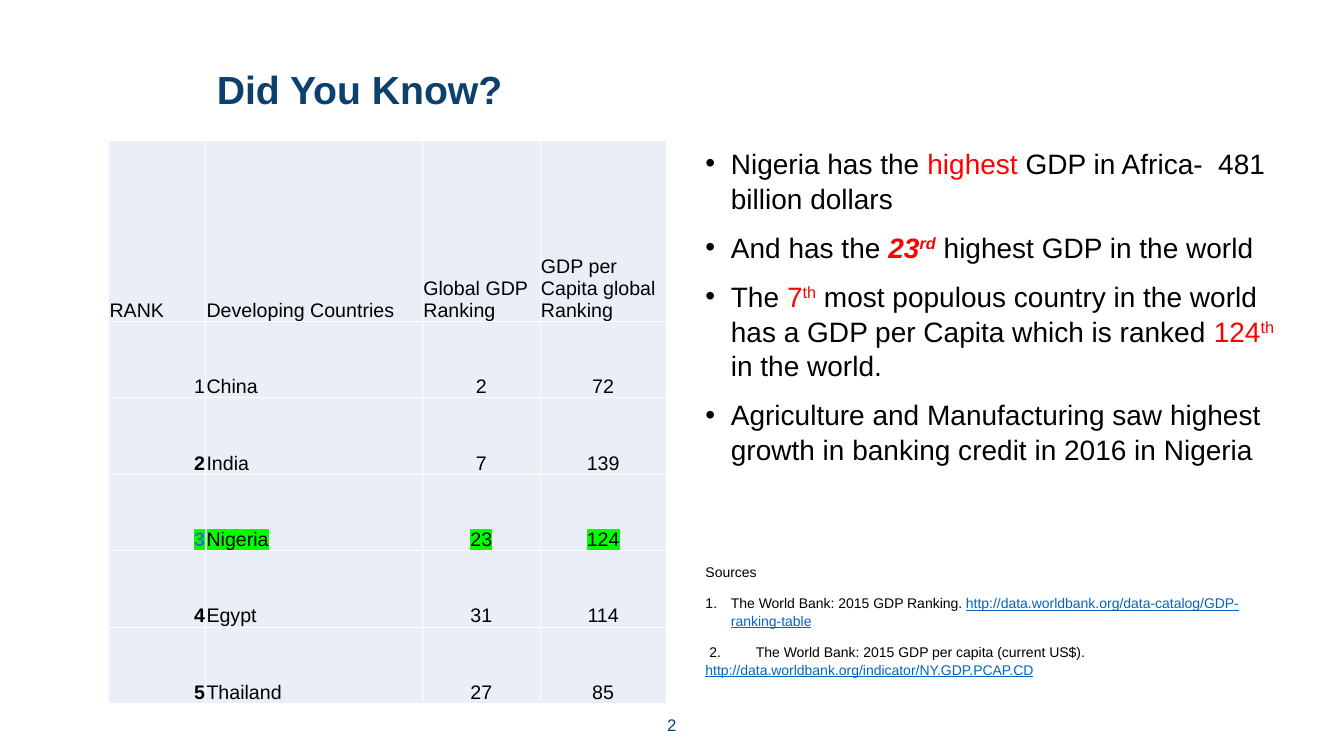
from lxml.etree import SubElement
from pptx import Presentation
from pptx.dml.color import RGBColor
from pptx.enum.text import MSO_ANCHOR as ANCHOR, PP_ALIGN as ALIGN
from pptx.oxml import parse_xml
from pptx.oxml.ns import nsdecls, qn
from pptx.util import Cm, Pt

COLORS = {"navy": "0C406D", "black": "000000", "red": "FF0000", "link": "0563C1",
          "rank": "2F75B5", "cell": "EAEFF7", "border": "FFFFFF", "marker": "00FF00"}
FONT = "Arial"

RED = dict(color="red")
RED_BOLD = dict(color="red", bold=True, italic=True)
LINK = dict(color="link", underline=True)
SUPER = dict(baseline=30000)

FACTS = [
    [("Nigeria has the ", {}), ("highest", RED), (" GDP in Africa-  481 billion dollars", {})],
    [("And has the ", {}), ("23", RED_BOLD), ("rd", RED_BOLD | SUPER),
     (" highest GDP in the world", {})],
    [("The ", {}), ("7", RED), ("th", RED | SUPER),
     (" most populous country in the world has a GDP per Capita which is ranked ", {}),
     ("124", RED), ("th", RED | SUPER), (" in the world.", {})],
    [("Agriculture and Manufacturing saw highest growth in banking credit in 2016 in Nigeria", {})],
]
HEADINGS = ["RANK", "Developing Countries", "Global GDP Ranking", "GDP per Capita global Ranking"]
COUNTRIES = [("China", 2, 72), ("India", 7, 139), ("Nigeria", 23, 124),
             ("Egypt", 31, 114), ("Thailand", 27, 85)]


def add_text(p, text, size=20, color="black", bold=False, italic=False,
             underline=False, baseline=None, highlight=None):
    r = p.add_run()
    r.text = text
    font = r.font
    font.name, font.size = FONT, Pt(size)
    font.bold, font.italic, font.underline = bold, italic, underline
    font.color.rgb = RGBColor.from_string(COLORS[color])
    rPr = r._r.get_or_add_rPr()
    if baseline:
        rPr.set("baseline", str(baseline))
    if highlight:
        rPr.find(qn("a:solidFill")).addnext(parse_xml(
            f'<a:highlight {nsdecls("a")}><a:srgbClr val="{COLORS[highlight]}"/></a:highlight>'))


def add_text_box(slide, left, top, width, height, anchor=ANCHOR.TOP):
    tf = slide.shapes.add_textbox(left, top, width, height).text_frame
    tf.word_wrap = True
    tf.vertical_anchor = anchor
    return tf


def next_paragraph(tf, first, margin=0, indent=0):
    p = tf.paragraphs[0] if first else tf.add_paragraph()
    p.line_spacing = 1.04
    p.space_before = Pt(0 if first else 10)
    pPr = p._p.get_or_add_pPr()
    pPr.set("marL", str(margin))
    pPr.set("indent", str(indent))
    return p, pPr


def add_title(slide, left, top, width, height):
    sp = slide.shapes.title
    sp.left, sp.top, sp.width, sp.height = left, top, width, height
    sp.text_frame.vertical_anchor = ANCHOR.MIDDLE
    p = sp.text_frame.paragraphs[0]
    p.alignment, p.line_spacing = ALIGN.LEFT, 0.9
    add_text(p, "Did You Know?", size=28, color="navy", bold=True)


def add_borders(cell):
    tcPr = cell._tc.get_or_add_tcPr()
    for i, side in enumerate(("lnL", "lnR", "lnT", "lnB")):
        tcPr.insert(i, parse_xml(
            f'<a:{side} {nsdecls("a")} w="12700"><a:solidFill>'
            f'<a:srgbClr val="{COLORS["border"]}"/></a:solidFill></a:{side}>'))


def fill_cell(cell, text, align, **fmt):
    cell.margin_left = cell.margin_right = cell.margin_top = Cm(0.02)
    cell.margin_bottom = 0
    cell.vertical_anchor = ANCHOR.BOTTOM
    cell.fill.solid()
    cell.fill.fore_color.rgb = RGBColor.from_string(COLORS["cell"])
    add_borders(cell)
    p = cell.text_frame.paragraphs[0]
    p.alignment = align
    add_text(p, text, size=14, **fmt)


def add_ranking_table(slide, left, top, width, height):
    table = slide.shapes.add_table(len(COUNTRIES) + 1, len(HEADINGS),
                                   left, top, width, height).table
    for col, share in zip(table.columns, (0.174, 0.389, 0.211, 0.226)):
        col.width = int(width * share)
    header_height = Cm(4.57)
    for i, row in enumerate(table.rows):
        row.height = (height - header_height) // len(COUNTRIES) if i else header_height

    for c, heading in enumerate(HEADINGS):
        fill_cell(table.cell(0, c), heading, ALIGN.LEFT)
    aligns = (ALIGN.RIGHT, ALIGN.LEFT, ALIGN.CENTER, ALIGN.CENTER)
    for rank, country in enumerate(COUNTRIES, 1):
        marked = country[0] == "Nigeria"
        for c, value in enumerate((rank, *country)):
            fill_cell(table.cell(rank, c), str(value), aligns[c],
                      bold=c == 0 and rank > 1,
                      color="rank" if marked and c == 0 else "black",
                      highlight="marker" if marked else None)


def add_facts(slide, left, top, width, height):
    tf = add_text_box(slide, left, top, width, height)
    for i, fact in enumerate(FACTS):
        p, pPr = next_paragraph(tf, i == 0, Cm(0.64), -Cm(0.64))
        SubElement(pPr, qn("a:buFont")).set("typeface", FONT)
        SubElement(pPr, qn("a:buChar")).set("char", "•")
        for text, fmt in fact:
            add_text(p, text, **fmt)


def add_sources(slide, left, top, width, height):
    tf = add_text_box(slide, left, top, width, height)
    p, _ = next_paragraph(tf, True)
    add_text(p, "Sources", size=10)

    # Numbered source with a hanging indent
    p, pPr = next_paragraph(tf, False, Cm(0.64), -Cm(0.64))
    SubElement(pPr, qn("a:buFont")).set("typeface", FONT)
    SubElement(pPr, qn("a:buAutoNum")).set("type", "arabicPeriod")
    add_text(p, "The World Bank: 2015 GDP Ranking. ", size=10)
    add_text(p, "http://data.worldbank.org/data-catalog/GDP-ranking-table", size=10, **LINK)

    # Source with a typed number, whose second line starts at the margin
    p, pPr = next_paragraph(tf, False, 0, Cm(0.1))
    tab = SubElement(SubElement(pPr, qn("a:tabLst")), qn("a:tab"))
    tab.set("pos", str(Cm(0.68)))
    tab.set("algn", "l")
    add_text(p, "2.\tThe World Bank: 2015 GDP per capita (current US$). ", size=10)
    add_text(p, "http://data.worldbank.org/indicator/NY.GDP.PCAP.CD", size=10, **LINK)


def add_page_number(slide, left, top, width, height):
    p = add_text_box(slide, left, top, width, height, ANCHOR.MIDDLE).paragraphs[0]
    p.alignment = ALIGN.CENTER
    add_text(p, "2", size=12, color="navy")


def main():
    prs = Presentation()
    prs.slide_width, prs.slide_height = Cm(33.87), Cm(19.05)
    slide = prs.slides.add_slide(prs.slide_layouts[5])
    add_title(slide, Cm(5.21), Cm(1.12), Cm(27.53), Cm(2.39))
    add_ranking_table(slide, Cm(2.74), Cm(3.53), Cm(14.05), Cm(14.2))
    add_facts(slide, Cm(17.53), Cm(3.53), Cm(15.19), Cm(8.5))
    add_sources(slide, Cm(17.53), Cm(14.05), Cm(15.19), Cm(3.4))
    add_page_number(slide, Cm(16.23), Cm(17.81), Cm(1.4), Cm(0.91))
    prs.save("out.pptx")


if __name__ == "__main__":
    main()
